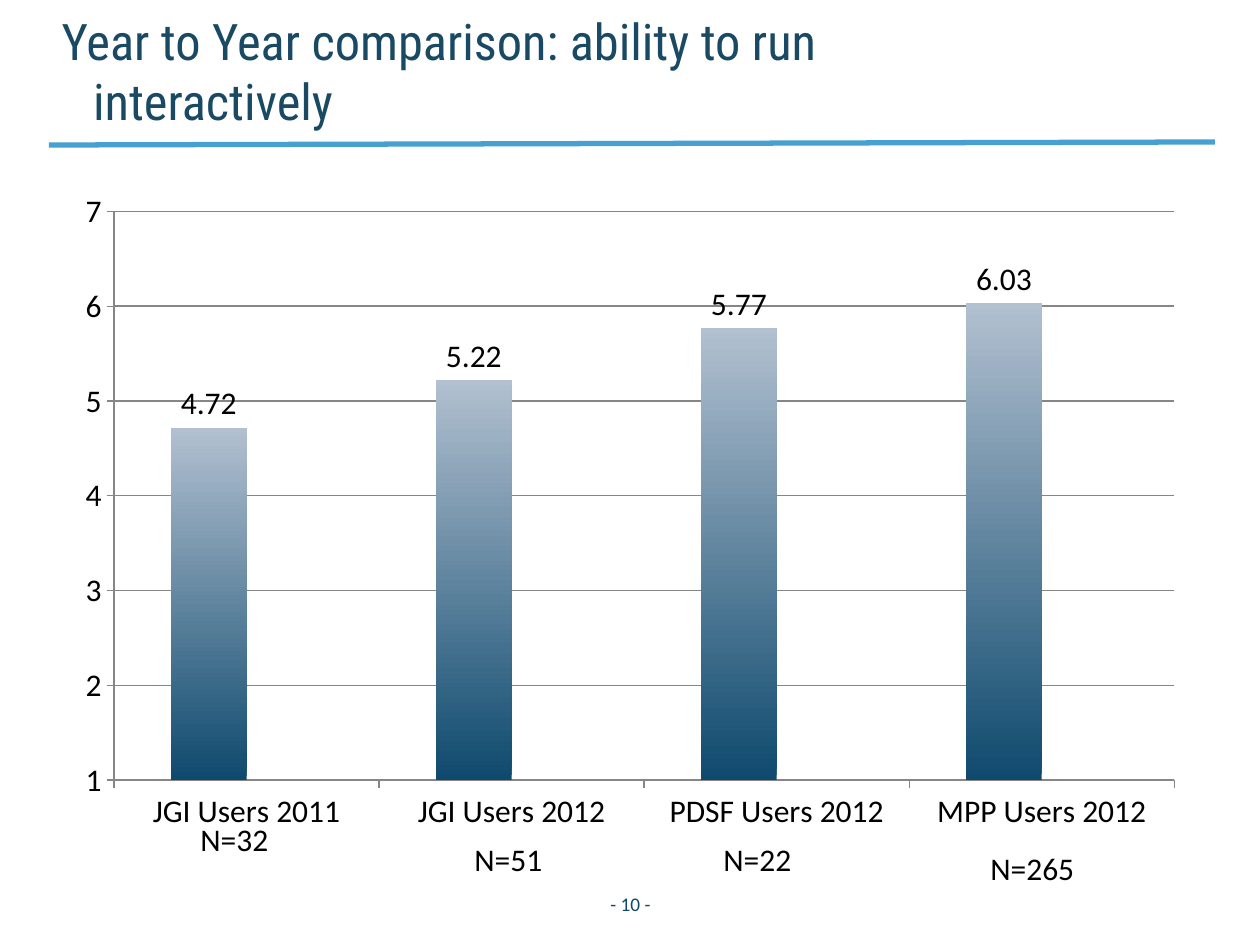
from dataclasses import dataclass

from lxml import etree
from pptx import Presentation, util as u
from pptx.chart import data as cd
from pptx.dml import color as c
from pptx.enum import chart as ch, shapes as sh, text as t
from pptx.oxml import ns


@dataclass(frozen=True)
class Theme:
    title: str = "194963"
    rule: str = "46A0D0"
    page: str = "114766"
    ink: str = "000000"
    grid: str = "868686"
    low: str = "0F4A6E"
    high: str = "B2C0D0"
    spare: str = "FCD235"
    head: str = "Roboto Condensed"
    body: str = "Calibri"
    big: float = 28.8
    mid: float = 18
    small: float = 11


@dataclass(frozen=True)
class Box:
    x: int
    y: int
    w: int
    h: int


@dataclass(frozen=True)
class Group:
    name: str
    score: float
    count: int
    box: Box


THEME = Theme()
GROUPS = [
    Group("JGI Users 2011", 4.72, 32, Box(188, 814, 95, 51)),
    Group("JGI Users 2012", 5.22, 51, Box(462, 834, 95, 51)),
    Group("PDSF Users 2012", 5.77, 22, Box(711, 834, 95, 51)),
    Group("MPP Users 2012", 6.03, 265, Box(978, 843, 110, 51)),
]


def px(n: int) -> u.Emu:
    return u.Emu(round(n * 914400 / 126))


def rgb(code: str) -> c.RGBColor:
    return c.RGBColor.from_string(code)


def area(box: Box) -> list[u.Emu]:
    return [px(n) for n in (box.x, box.y, box.w, box.h)]


def style(font, size: float, face: str, tint: str) -> None:
    font.size, font.name = u.Pt(size), face
    font.color.rgb = rgb(tint)


def write(frame, words: str, *, size: float = THEME.mid,
          face: str = THEME.body, tint: str = THEME.ink,
          align=t.PP_ALIGN.LEFT, anchor=t.MSO_ANCHOR.TOP,
          wrap: bool = True, fit=t.MSO_AUTO_SIZE.NONE):
    frame.word_wrap, frame.auto_size = wrap, fit
    frame.vertical_anchor = anchor
    para = frame.paragraphs[0]
    para.alignment = align
    run = para.add_run()
    run.text = words
    style(run.font, size, face, tint)
    return para


def add_title(slide, words: str) -> None:
    title = slide.shapes.title
    title.left, title.top, title.width, title.height = area(
        Box(49, 25, 940, 106))
    frame = title.text_frame
    frame.margin_top = frame.margin_bottom = 0
    para = write(frame, words, size=THEME.big, face=THEME.head,
                 tint=THEME.title, anchor=t.MSO_ANCHOR.BOTTOM)
    # Hanging indent for the second line
    props = para._p.get_or_add_pPr()
    props.set("marL", str(u.Inches(0.25)))
    props.set("indent", str(-u.Inches(0.25)))


def add_rule(slide) -> None:
    rule = slide.shapes.add_connector(
        sh.MSO_CONNECTOR.STRAIGHT, px(49), px(145), px(1215), px(142))
    rule.line.color.rgb = rgb(THEME.rule)
    rule.line.width = u.Pt(3)
    etree.SubElement(rule._element.spPr, ns.qn("a:effectLst"))


def add_bars(slide, groups: list[Group]) -> None:
    data = cd.CategoryChartData()
    data.categories = [g.name for g in groups]
    data.add_series("Series 1", [g.score for g in groups])
    data.add_series("Series 2", [None] * len(groups))
    chart = slide.shapes.add_chart(
        ch.XL_CHART_TYPE.COLUMN_CLUSTERED,
        *area(Box(63, 179, 1134, 665)), data).chart
    chart.has_legend = chart.has_title = False
    style(chart.font, THEME.mid, THEME.body, THEME.ink)

    plot = chart.plots[0]
    plot.gap_width, plot.overlap = 150, 0
    plot.vary_by_categories = False
    bars, spare = plot.series
    bars.format.fill.gradient()
    bars.format.fill.gradient_angle = 90
    for stop, tint in zip(bars.format.fill.gradient_stops,
                          (THEME.low, THEME.high)):
        stop.color.rgb = rgb(tint)
    spare.format.fill.solid()
    spare.format.fill.fore_color.rgb = rgb(THEME.spare)
    tags = bars.data_labels
    tags.show_value = True
    tags.position = ch.XL_LABEL_POSITION.OUTSIDE_END

    scale = chart.value_axis
    scale.minimum_scale, scale.maximum_scale = 1, 7
    scale.major_unit = 1
    scale.has_major_gridlines = True
    for axis in (scale, chart.category_axis):
        axis.major_tick_mark = ch.XL_TICK_MARK.OUTSIDE
        axis.minor_tick_mark = ch.XL_TICK_MARK.NONE
    for part in (scale, chart.category_axis, scale.major_gridlines):
        part.format.line.color.rgb = rgb(THEME.grid)
        part.format.line.width = u.Pt(0.75)


def add_text(slide, box: Box, words: str, **form) -> None:
    write(slide.shapes.add_textbox(*area(box)).text_frame, words, **form)


def main() -> None:
    deck = Presentation()
    deck.slide_width, deck.slide_height = px(1260), px(945)
    slide = deck.slides.add_slide(deck.slide_layouts[5])
    add_rule(slide)
    add_title(slide, "Year to Year comparison: ability to run interactively")
    add_bars(slide, GROUPS)
    add_text(slide, Box(567, 878, 127, 51), "- 10 -", size=THEME.small,
             tint=THEME.page, align=t.PP_ALIGN.CENTER,
             anchor=t.MSO_ANCHOR.MIDDLE)
    for group in GROUPS:
        add_text(slide, group.box, f"N={group.count}", wrap=False,
                 fit=t.MSO_AUTO_SIZE.SHAPE_TO_FIT_TEXT)
    deck.save("out.pptx")


if __name__ == "__main__":
    main()
